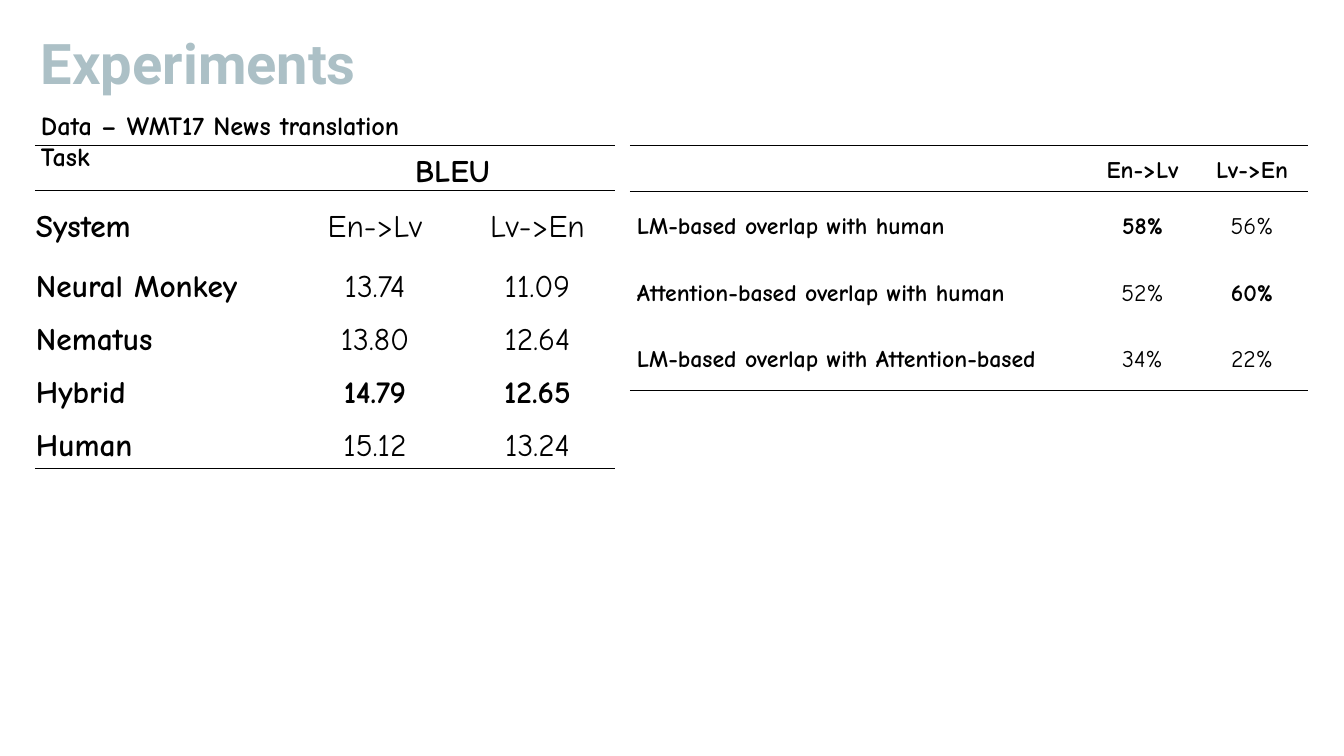
from lxml import etree
from pptx import Presentation, util as u
from pptx.dml.color import RGBColor
from pptx.enum import text
from pptx.oxml.ns import qn

# Content
TITLE = "Experiments"
DATA_NOTE = "Data – WMT17 News translation Task"
BLEU_SCORES = {
    "rows": [
        ("", "BLEU", ""),
        ("System", "En->Lv", "Lv->En"),
        ("Neural Monkey", "13.74", "11.09"),
        ("Nematus", "13.80", "12.64"),
        ("Hybrid", "14.79", "12.65"),
        ("Human", "15.12", "13.24"),
    ],
    "bold": {"BLEU", "14.79", "12.65"},
    "at": (35, 145), "widths": (255, 170, 155), "heights": (45, 66, 53, 53, 53, 53),
    "size": 37, "indent": 0, "fill": None,
}
OVERLAPS = {
    "rows": [
        ("", "En->Lv", "Lv->En"),
        ("LM-based overlap with human", "58%", "56%"),
        ("Attention-based overlap with human", "52%", "60%"),
        ("LM-based overlap with Attention-based", "34%", "22%"),
    ],
    "bold": {"En->Lv", "Lv->En", "58%", "60%"},
    "at": (630, 145), "widths": (459, 107, 112), "heights": (46, 66, 67, 66),
    "size": 28, "indent": 6, "fill": "paper",
}
COLORS = {"title": "ACC0C6", "ink": "000000", "paper": "FFFFFF"}
NO_GRID_STYLE = "{2D5ABB26-0587-4C30-8999-92F81FD0307C}"


def px(n):
    return u.Emu(n * 14960)


def write(frame, words, size, font="Comic Neue", color="ink", bold=True,
          align=text.PP_ALIGN.LEFT, spacing=None, after=None, indent=0):
    paragraph = frame.paragraphs[0]
    paragraph.alignment = align
    paragraph.line_spacing = spacing
    if after is not None:
        paragraph.space_after = u.Pt(after)
    if indent:
        properties = paragraph._p.get_or_add_pPr()
        properties.set("marL", "0")
        properties.set("indent", str(px(indent)))
    run = paragraph.add_run()
    run.text = words
    run.font.size, run.font.name, run.font.bold = u.Pt(size), font, bold
    run.font.color.rgb = RGBColor.from_string(COLORS[color])


def add_label(slide, words, left, top, width, height, inset_top=3, **style):
    frame = slide.shapes.add_textbox(px(left), px(top), px(width), px(height)).text_frame
    frame.word_wrap = True
    frame.margin_top = px(inset_top)
    write(frame, words, **style)


def add_rules(cell, sides):
    properties = cell._tc.get_or_add_tcPr()
    for position, side in enumerate(sides):
        rule = etree.Element(qn(f"a:ln{side}"), w=str(u.Pt(1)))
        fill = etree.SubElement(rule, qn("a:solidFill"))
        etree.SubElement(fill, qn("a:srgbClr"), val=COLORS["ink"])
        properties.insert(position, rule)


def add_results(slide, results):
    rows, widths, heights = results["rows"], results["widths"], results["heights"]
    left, top = results["at"]
    frame = slide.shapes.add_table(len(rows), len(widths), px(left), px(top),
                                   px(sum(widths)), px(sum(heights)))
    table = frame.table
    table.first_row = table.horz_banding = False
    for style in frame._element.iter(qn("a:tableStyleId")):
        style.text = NO_GRID_STYLE
    for column, width in zip(table.columns, widths):
        column.width = px(width)
    for row, height in zip(table.rows, heights):
        row.height = px(height)

    for r, row in enumerate(rows):
        for c, words in enumerate(row):
            cell = table.cell(r, c)
            cell.vertical_anchor = text.MSO_ANCHOR.MIDDLE
            cell.margin_left = cell.margin_right = cell.margin_top = px(1)
            cell.margin_bottom = 0
            if results["fill"]:
                cell.fill.solid()
                cell.fill.fore_color.rgb = RGBColor.from_string(COLORS[results["fill"]])
            else:
                cell.fill.background()
            # Rules above and below the header, and under the last row
            if r == 0:
                add_rules(cell, "TB")
            elif r == len(rows) - 1:
                add_rules(cell, "B")
            if words:
                write(cell.text_frame, words, size=results["size"],
                      bold=c == 0 or words in results["bold"],
                      align=text.PP_ALIGN.CENTER if c else text.PP_ALIGN.LEFT,
                      spacing=1.19, after=14, indent=0 if c else results["indent"])
    return table


def main():
    prs = Presentation()
    prs.slide_width, prs.slide_height = px(1344), px(756)
    slide = prs.slides.add_slide(prs.slide_layouts[6])

    # Heading
    add_label(slide, TITLE, 35, 37, 1273, 107, inset_top=7,
              size=66, font="Roboto", color="title", spacing=0.76)

    # Results, with BLEU spanning both directions
    bleu = add_results(slide, BLEU_SCORES)
    bleu.cell(0, 1).merge(bleu.cell(0, 2))
    add_label(slide, DATA_NOTE, 35, 106, 422, 38, size=30.9)
    add_results(slide, OVERLAPS)

    prs.save("out.pptx")


if __name__ == "__main__":
    main()
